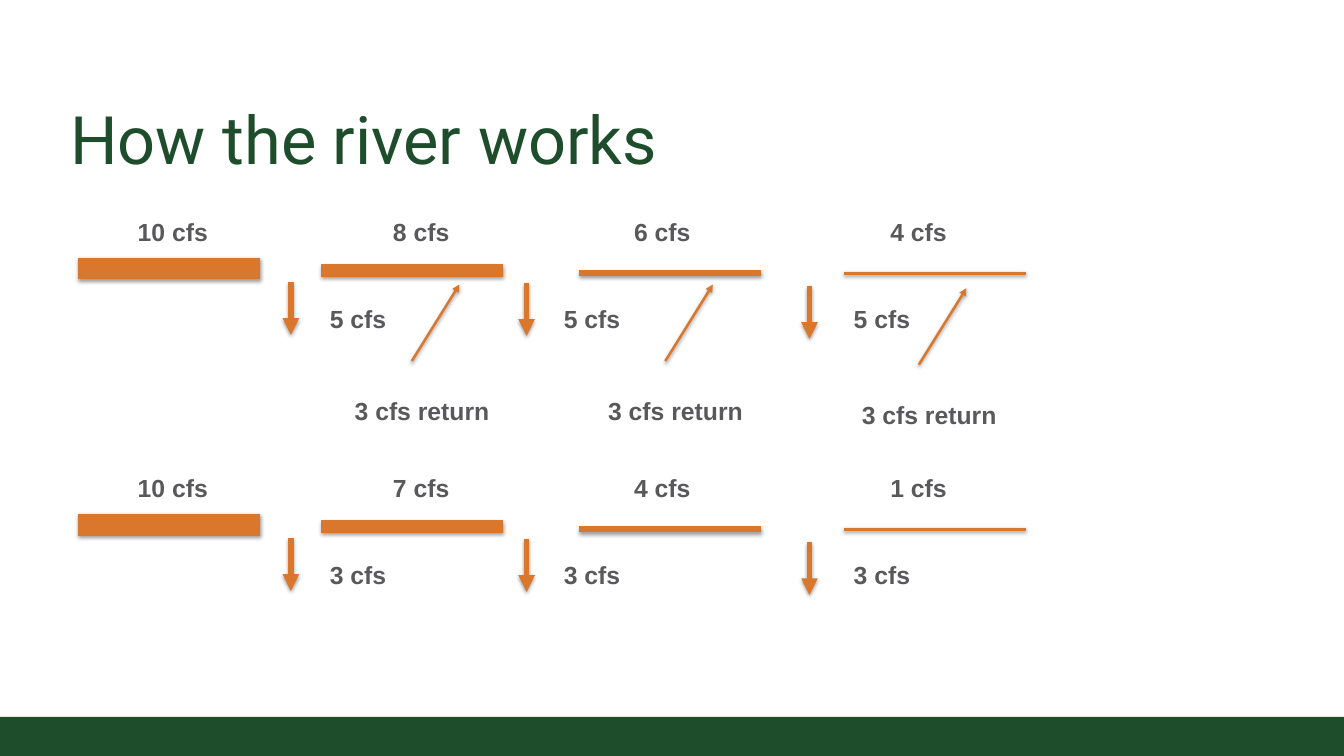
from lxml import etree
from pptx import Presentation
from pptx.dml.color import RGBColor
from pptx.enum.shapes import MSO_CONNECTOR, MSO_SHAPE
from pptx.enum.text import MSO_ANCHOR, PP_ALIGN
from pptx.oxml.ns import qn
from pptx.util import Emu, Inches, Pt

GREEN = RGBColor(0x1E, 0x4D, 0x2B)
ORANGE = RGBColor(0xD9, 0x78, 0x2C)
GRAY = RGBColor(0x59, 0x59, 0x5B)
BLACK = RGBColor(0, 0, 0)
STRAIGHT = MSO_CONNECTOR.STRAIGHT
RECTANGLE = MSO_SHAPE.RECTANGLE
BOTTOM = MSO_ANCHOR.BOTTOM
LEFT = PP_ALIGN.LEFT

prs = Presentation()
prs.slide_width = Inches(15.11)
prs.slide_height = Inches(8.5)
COL = prs.slide_width / 100
ROW = prs.slide_height / 100
s = prs.slides.add_slide(prs.slide_layouts[5])


def add_flow(x, y, dx, dy, weight, arrow=False):
    ends = [Emu(round(v)) for v in (x * COL, y * ROW, (x + dx) * COL, (y + dy) * ROW)]
    line = s.shapes.add_connector(STRAIGHT, *ends)
    line.line.color.rgb = ORANGE
    line.line.width = Pt(weight)
    if arrow:
        etree.SubElement(line.line._ln, qn("a:tailEnd"), type="triangle")
    effects = etree.SubElement(line._element.spPr, qn("a:effectLst"))
    shadow = etree.SubElement(effects, qn("a:outerShdw"), blurRad="40000",
                              dist="20000", dir="5400000", rotWithShape="0")
    color = etree.SubElement(shadow, qn("a:srgbClr"), val=str(BLACK))
    etree.SubElement(color, qn("a:alpha"), val="38000")


def add_label(text, x, y):
    box = s.shapes.add_textbox(round(x * COL), round(y * ROW), round(12 * COL), round(5.18 * ROW))
    tf = box.text_frame
    tf.word_wrap = True
    tf.text = text
    font = tf.paragraphs[0].runs[0].font
    font.name = "Arial"
    font.size = Pt(20)
    font.bold = True
    font.color.rgb = GRAY


footer = s.shapes.add_shape(RECTANGLE, 0, round(94.82 * ROW), prs.slide_width, round(5.18 * ROW))
footer.shadow.inherit = False
footer.fill.solid()
footer.fill.fore_color.rgb = GREEN
footer.line.fill.background()

title = s.shapes.title
title.left, title.top = round(4.57 * COL), round(11.65 * ROW)
title.width, title.height = round(90.93 * COL), round(13.06 * ROW)
tf = title.text_frame
tf.text = "How the river works"
tf.vertical_anchor = BOTTOM
tf.margin_left = tf.margin_right = tf.margin_top = tf.margin_bottom = Inches(0.1)
p = tf.paragraphs[0]
p.alignment = LEFT
font = p.runs[0].font
font.name = "Roboto"
font.size = Pt(54)
font.color.rgb = GREEN

reaches = [(5.82, 35.53, 17.5, 9.6), (23.89, 35.76, 10, 28.59),
           (43.08, 36.12, 5, 46.53), (62.81, 36.12, 2.5, 65.59)]
diversions = [(21.64, 37.29, 23.89), (39.18, 37.41, 41.3), (60.23, 37.82, 62.87)]
returns = [(30.64, 47.76), (49.5, 47.76), (68.37, 48.24)]
scenarios = [(0, ["10 cfs", "8 cfs", "6 cfs", "4 cfs"], "5 cfs"),
             (33.88, ["10 cfs", "7 cfs", "4 cfs", "1 cfs"], "3 cfs")]

for drop, flows, diverted in scenarios:
    for (x, y, weight, label_x), flow in zip(reaches, flows):
        add_flow(x, y + drop, 13.55, 0, weight)
        add_label(flow, label_x, 28.12 + drop)
    for x, y, label_x in diversions:
        add_flow(x, y + drop, 0, 7, 4.5, arrow=True)
        add_label(diverted, label_x, 39.65 + drop)

for x, y in returns:
    add_flow(x, y, 3.54, -10.12, 2, arrow=True)
    add_label("3 cfs return", x - 4.9, y + 4)

prs.save("out.pptx")
